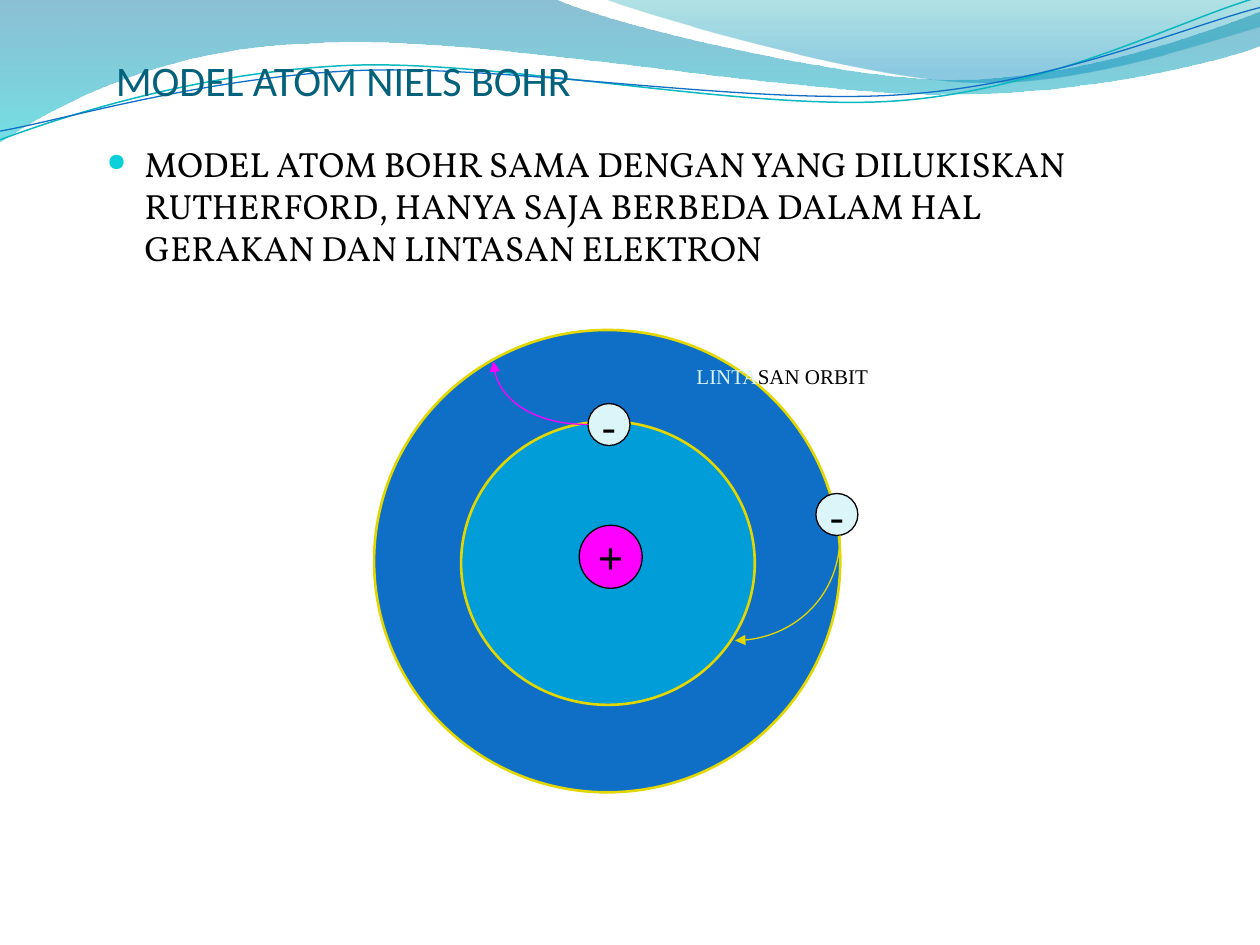
from dataclasses import dataclass

from lxml.etree import SubElement
from pptx import Presentation
from pptx.dml.color import RGBColor
from pptx.enum.shapes import MSO_SHAPE
from pptx.enum.text import MSO_ANCHOR, PP_ALIGN
from pptx.oxml.ns import qn
from pptx.util import Pt

WHITE = RGBColor(0xFF, 0xFF, 0xFF)
BLACK = RGBColor(0x00, 0x00, 0x00)
TITLE_TEAL = RGBColor(0x04, 0x61, 0x7B)
BULLET_CYAN = RGBColor(0x0B, 0xD0, 0xD9)
LINE_TEAL = RGBColor(0x0A, 0xB8, 0xBF)
BLUE = RGBColor(0x0F, 0x6F, 0xC6)
SKY = RGBColor(0x00, 0x9D, 0xD9)
YELLOW = RGBColor(0xE2, 0xD7, 0x00)
MAGENTA = RGBColor(0xFF, 0x00, 0xFF)
PALE = RGBColor(0xDB, 0xF5, 0xF9)
SERIF = "Times New Roman"

Point = tuple[float, float]


@dataclass
class GradientStop:
    position: float
    color: RGBColor
    opacity: int


@dataclass
class Curve:
    """A start point, then segments of one point (line) or three (Bezier)."""
    start: Point
    segments: list[tuple[Point, ...]]


@dataclass
class Run:
    text: str
    font: str
    size: float
    color: RGBColor
    bold: bool = False


@dataclass
class Circle:
    left: float
    top: float
    width: float
    height: float
    fill: RGBColor
    line: RGBColor
    line_width: float
    sign: Run | None = None


def add_curve(slide, curve: Curve, close: bool = False):
    """Build a freeform, then join each three-point segment into a cubic Bezier."""
    points = [(Pt(x), Pt(y)) for segment in curve.segments for x, y in segment]
    builder = slide.shapes.build_freeform(Pt(curve.start[0]), Pt(curve.start[1]), scale=1.0)
    builder.add_line_segments(points, close=close)
    shape = builder.convert_to_shape()
    shape.shadow.inherit = False
    lines = iter(list(shape._element.iter(qn("a:lnTo"))))
    for segment in curve.segments:
        first, *others = [next(lines) for _ in segment]
        if others:
            first.tag = qn("a:cubicBezTo")
            for line in others:
                first.append(line[0])
                line.getparent().remove(line)
    return shape


def add_wave(slide, curve: Curve, stops: list[GradientStop]) -> None:
    shape = add_curve(slide, curve, close=True)
    shape.line.fill.background()
    shape.fill.gradient()
    shape.fill.gradient_angle = 270
    for target, stop in zip(shape.fill.gradient_stops, stops):
        target.position = stop.position
        target.color.rgb = stop.color
    colors = shape.fill._xPr.iter(qn("a:srgbClr"))
    for color, stop in zip(colors, stops):
        SubElement(color, qn("a:alpha"), val=str(stop.opacity * 1000))


def add_line(slide, curve: Curve, color: RGBColor, width: float, arrow: bool = False) -> None:
    shape = add_curve(slide, curve)
    shape.fill.background()
    shape.line.color.rgb = color
    shape.line.width = Pt(width)
    if arrow:
        SubElement(shape.line._get_or_add_ln(), qn("a:tailEnd"), type="triangle")


def add_run(paragraph, item: Run) -> None:
    run = paragraph.add_run()
    run.text = item.text
    run.font.name = item.font
    run.font.size = Pt(item.size)
    run.font.bold = item.bold
    run.font.color.rgb = item.color


def add_circle(slide, circle: Circle) -> None:
    shape = slide.shapes.add_shape(MSO_SHAPE.OVAL, Pt(circle.left), Pt(circle.top),
                                   Pt(circle.width), Pt(circle.height))
    shape.shadow.inherit = False
    shape.fill.solid()
    shape.fill.fore_color.rgb = circle.fill
    shape.line.color.rgb = circle.line
    shape.line.width = Pt(circle.line_width)
    if circle.sign:
        frame = shape.text_frame
        frame.word_wrap = False
        frame.vertical_anchor = MSO_ANCHOR.MIDDLE
        frame.paragraphs[0].alignment = PP_ALIGN.CENTER
        add_run(frame.paragraphs[0], circle.sign)


def add_text(slide, left: float, top: float, width: float, height: float, runs: list[Run]):
    frame = slide.shapes.add_textbox(Pt(left), Pt(top), Pt(width), Pt(height)).text_frame
    frame.word_wrap = True
    for item in runs:
        add_run(frame.paragraphs[0], item)
    return frame


def add_bullet(paragraph) -> None:
    properties = paragraph._p.get_or_add_pPr()
    properties.set("marL", str(Pt(21.6)))
    properties.set("indent", str(-Pt(21.6)))
    color = SubElement(properties, qn("a:buClr"))
    SubElement(color, qn("a:srgbClr"), val=str(BULLET_CYAN))
    SubElement(properties, qn("a:buSzPct"), val="70000")
    SubElement(properties, qn("a:buChar"), char="●")


def main() -> None:
    presentation = Presentation()
    presentation.slide_width, presentation.slide_height = Pt(720), Pt(540)
    slide = presentation.slides.add_slide(presentation.slide_layouts[6])
    slide.background.fill.solid()
    slide.background.fill.fore_color.rgb = WHITE

    # Waves along the top
    add_wave(slide, Curve((0, 0), [
        ((316.8, -0.7),),
        ((342.7, 12.2), (478.1, 45.4), (545.8, 45.4)),
        ((614.2, 45.4), (689.8, 18.7), (720, 6.5)),
        ((720.7, 25.9),),
        ((707.8, 31.7), (626.4, 54.7), (537.1, 54)),
        ((447.8, 54), (275, 20.2), (185, 24.5)),
        ((92.9, 25.9), (33.1, 59.8), (-0.7, 81.4)),
    ]), [GradientStop(0, RGBColor(0x00, 0x74, 0xA1), 45),
         GradientStop(1, RGBColor(0x00, 0xC6, 0xCF), 55)])
    add_wave(slide, Curve((344.9, -0.7), [
        ((366.5, 7.9), (491, 44.6), (553.7, 46.8)),
        ((616.3, 49.7), (691.9, 23), (720, 15.1)),
        ((720, 0),),
    ]), [GradientStop(0, RGBColor(0x00, 0xA1, 0xA9), 30),
         GradientStop(0.8, RGBColor(0x00, 0x8B, 0xBF), 45)])
    add_line(slide, Curve((0, 79.9), [
        ((34.6, 67), (113.8, 41), (199.4, 37.4)),
        ((284.4, 33.8), (427, 64.1), (513.4, 57.6)),
        ((599.8, 51.1), (675.4, 10.8), (718.6, -1.4)),
    ]), LINE_TEAL, 0.85)
    add_line(slide, Curve((0, 74.9), [
        ((33.8, 69.1), (118.1, 43.9), (203.8, 40.3)),
        ((290.2, 36.7), (429.8, 60.5), (516.2, 54)),
        ((601.9, 48.2), (677.5, 15.1), (720, 4.3)),
    ]), BLUE, 0.75)

    # Title and body
    title = add_text(slide, 66.2, 17.5, 578.2, 42.5,
                     [Run("MODEL ATOM NIELS BOHR", "Calibri", 24, TITLE_TEAL)])
    title.vertical_anchor = MSO_ANCHOR.BOTTOM
    title.margin_left = title.margin_right = title.margin_bottom = 0
    body = add_text(slide, 54, 77.8, 612, 401.8, [
        Run("MODEL ATOM BOHR SAMA DENGAN YANG DILUKISKAN RUTHERFORD, HANYA SAJA "
            "BERBEDA DALAM HAL GERAKAN DAN LINTASAN ELEKTRON", "Vollkorn", 20, BLACK)])
    body.paragraphs[0].line_spacing = Pt(24)
    add_bullet(body.paragraphs[0])

    # Orbits, nucleus and electrons
    minus = Run("-", SERIF, 24, BLACK)
    for circle in (
        Circle(213.8, 188.6, 266.4, 264.2, BLUE, YELLOW, 1.5),
        Circle(263.5, 240.8, 167.8, 162, SKY, YELLOW, 1.5),
        Circle(331, 300.2, 36, 36, MAGENTA, BLACK, 0.75, Run("+", SERIF, 26, BLACK, True)),
        Circle(336, 230.6, 24, 24, PALE, BLACK, 0.75, minus),
        Circle(466.2, 282, 24, 24, PALE, BLACK, 0.75, minus),
    ):
        add_circle(slide, circle)

    # Electron jumps
    add_line(slide, Curve((336, 242.6), [((305.9, 242.6), (282, 226.6), (282, 206.6))]),
             MAGENTA, 0.75, arrow=True)
    add_line(slide, Curve((480, 306), [((480, 339.1), (453.1, 366), (420, 366))]),
             YELLOW, 0.75, arrow=True)

    # Orbit label
    label = add_text(slide, 384, 204, 126, 21.6, [
        Run("LINTA", SERIF, 12, PALE), Run("SAN ORBIT", SERIF, 12, BLACK)])
    label.paragraphs[0].alignment = PP_ALIGN.CENTER

    presentation.save("out.pptx")


if __name__ == "__main__":
    main()
